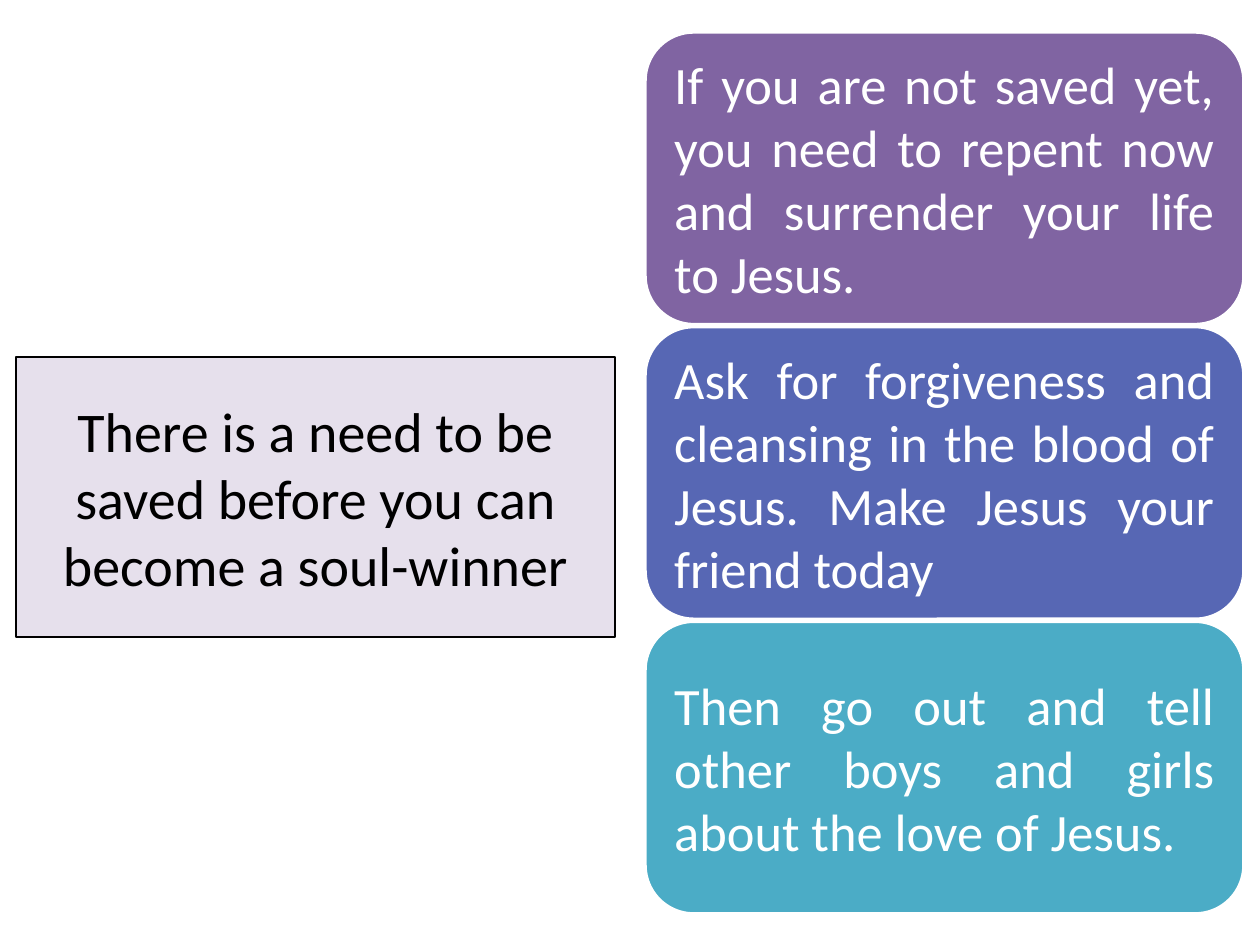
import pptx
import pptx.util
import pptx.dml.color
import pptx.enum.shapes
import pptx.enum.text
from dataclasses import dataclass

# Content
TITLE = "There is a need to be saved before you can become a soul-winner"
STEPS = [
    ("If you are not saved yet, you need to repent now and surrender your life to Jesus.", "8064A2"),
    ("Ask for forgiveness and cleansing in the blood of Jesus. Make Jesus your friend today", "5767B4"),
    ("Then go out and tell other boys and girls about the love of Jesus.", "4BACC6"),
]


@dataclass(frozen=True)
class Theme:
    font: str = "Calibri"
    title_size: int = 32
    step_size: int = 30
    dark: str = "000000"
    light: str = "FFFFFF"
    title_fill: str = "E6E0EC"


THEME = Theme()
SHAPES = pptx.enum.shapes.MSO_SHAPE
ALIGN = pptx.enum.text.PP_ALIGN

# Layout in px
PX_PER_INCH = 126
PAGE_SIZE = (1260, 945)
TITLE_AREA = (16, 357, 599, 280)
STEPS_AREA = (645, 32, 599, 882)
STEP_GAP = 2
INSET = 15


def px(length):
    return pptx.util.Emu(round(length * 914400 / PX_PER_INCH))


def rgb(code):
    return pptx.dml.color.RGBColor.from_string(code)


def add_box(page, kind, area, text, fill, line, line_width, size, color, align, inset):
    box = page.shapes.add_shape(kind, *map(px, area))
    box.shadow.inherit = False
    box.fill.solid()
    box.fill.fore_color.rgb = rgb(fill)
    box.line.color.rgb = rgb(line)
    box.line.width = pptx.util.Pt(line_width)

    frame = box.text_frame
    frame.word_wrap = True
    frame.vertical_anchor = pptx.enum.text.MSO_ANCHOR.MIDDLE
    frame.margin_left = frame.margin_right = px(inset)
    frame.margin_top = frame.margin_bottom = px(inset)
    frame.text = text
    para = frame.paragraphs[0]
    para.alignment = align
    for span in para.runs:
        span.font.name = THEME.font
        span.font.size = pptx.util.Pt(size)
        span.font.color.rgb = rgb(color)


def main():
    deck = pptx.Presentation()
    deck.slide_width, deck.slide_height = map(px, PAGE_SIZE)
    page = deck.slides.add_slide(deck.slide_layouts[6])

    # Title panel
    add_box(page, SHAPES.RECTANGLE, TITLE_AREA, TITLE, THEME.title_fill,
            THEME.dark, 0.75, THEME.title_size, THEME.dark, ALIGN.CENTER, INSET)

    # Stack of step cards
    left, top, width, height = STEPS_AREA
    card_height = (height - STEP_GAP * (len(STEPS) - 1)) / len(STEPS)
    for index, (text, fill) in enumerate(STEPS):
        area = (left, top + index * (card_height + STEP_GAP), width, card_height)
        add_box(page, SHAPES.ROUNDED_RECTANGLE, area, text, fill,
                THEME.light, 2, THEME.step_size, THEME.light, ALIGN.JUSTIFY, INSET)

    deck.save("out.pptx")


if __name__ == "__main__":
    main()
